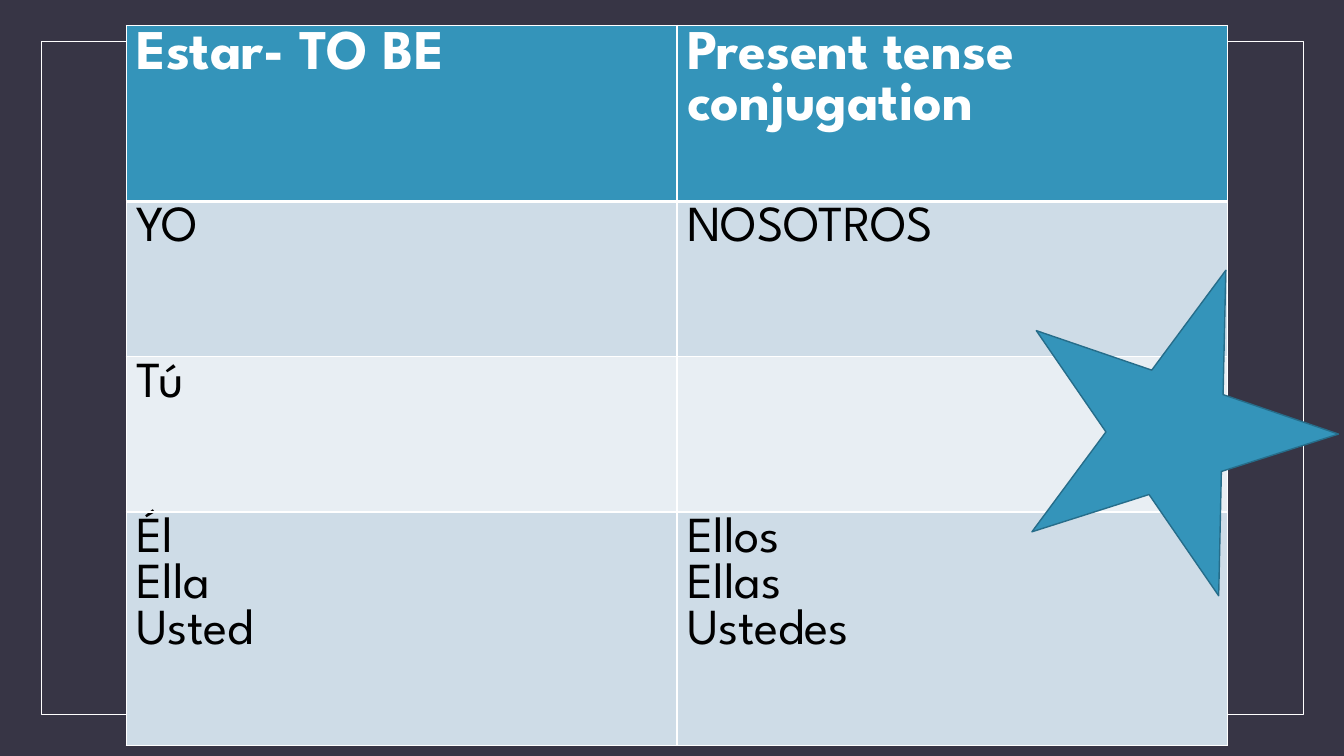
from dataclasses import dataclass

from lxml import etree
from pptx import Presentation
from pptx import util as u
from pptx.dml.color import RGBColor
from pptx.enum import shapes
from pptx.oxml import ns


@dataclass(frozen=True)
class Theme:
    font: str = "League Spartan"
    background: str = "373545"
    accent: str = "3494BA"
    accent_dark: str = "266D8A"
    band_dark: str = "CEDCE7"
    band_light: str = "E8EEF3"
    white: str = "FFFFFF"
    black: str = "000000"
    header_size: int = 40
    body_size: int = 36


theme = Theme()


def write_text(frame, lines, size, color, bold=False):
    for index, line in enumerate(lines):
        paragraph = frame.paragraphs[0] if index == 0 else frame.add_paragraph()
        run = paragraph.add_run()
        run.text = line
        run.font.name = theme.font
        run.font.size = u.Pt(size)
        run.font.bold = bold
        run.font.color.rgb = RGBColor.from_string(color)


def set_borders(cell, **widths):
    """Draw white cell borders; widths are points keyed by side: L, R, T, B."""
    properties = cell._tc.get_or_add_tcPr()
    for position, (side, width) in enumerate(widths.items()):
        line = etree.Element(ns.qn(f"a:ln{side}"), w=str(u.Pt(width)))
        fill = etree.SubElement(line, ns.qn("a:solidFill"))
        etree.SubElement(fill, ns.qn("a:srgbClr"), val=theme.white)
        properties.insert(position, line)


presentation = Presentation()
presentation.slide_width = u.Cm(33.87)
presentation.slide_height = u.Cm(19.05)
slide = presentation.slides.add_slide(presentation.slide_layouts[6])
slide.background.fill.solid()
slide.background.fill.fore_color.rgb = RGBColor.from_string(theme.background)

# Frame behind the table
frame = slide.shapes.add_shape(
    shapes.MSO_SHAPE.RECTANGLE, u.Cm(1.04), u.Cm(1.04), u.Cm(31.8), u.Cm(16.97)
)
frame.shadow.inherit = False
frame.fill.background()
frame.line.color.rgb = RGBColor.from_string(theme.white)
frame.line.width = u.Pt(0.5)

# Conjugation table
conjugation = [
    (["Estar- TO BE"], ["Present tense conjugation"]),
    (["YO"], ["NOSOTROS"]),
    (["Tú"], []),
    (["Él", "Ella", "Usted"], ["Ellos", "Ellas", "Ustedes"]),
]
row_heights = [4.44, 3.91, 3.91, 5.89]
column_width = 13.88

table = slide.shapes.add_table(
    len(conjugation), 2, u.Cm(3.18), u.Cm(0.64),
    u.Cm(2 * column_width), u.Cm(sum(row_heights)),
).table
for column in table.columns:
    column.width = u.Cm(column_width)

for row_index, row in enumerate(conjugation):
    table.rows[row_index].height = u.Cm(row_heights[row_index])
    is_header = row_index == 0
    if is_header:
        fill_color = theme.accent
    else:
        fill_color = theme.band_dark if row_index % 2 else theme.band_light
    for column_index, lines in enumerate(row):
        cell = table.cell(row_index, column_index)
        cell.fill.solid()
        cell.fill.fore_color.rgb = RGBColor.from_string(fill_color)
        set_borders(cell, L=1, R=1, T=3 if row_index == 1 else 1, B=3 if is_header else 1)
        write_text(
            cell.text_frame, lines,
            size=theme.header_size if is_header else theme.body_size,
            color=theme.white if is_header else theme.black,
            bold=is_header,
        )

# Star over the right edge
star = slide.shapes.add_shape(
    shapes.MSO_SHAPE.STAR_5_POINT, u.Cm(25.6), u.Cm(6.6), u.Cm(8.05), u.Cm(7.82)
)
star.rotation = 18.9
star.shadow.inherit = False
star.fill.solid()
star.fill.fore_color.rgb = RGBColor.from_string(theme.accent)
star.line.color.rgb = RGBColor.from_string(theme.accent_dark)
star.line.width = u.Pt(1)

presentation.save("out.pptx")
